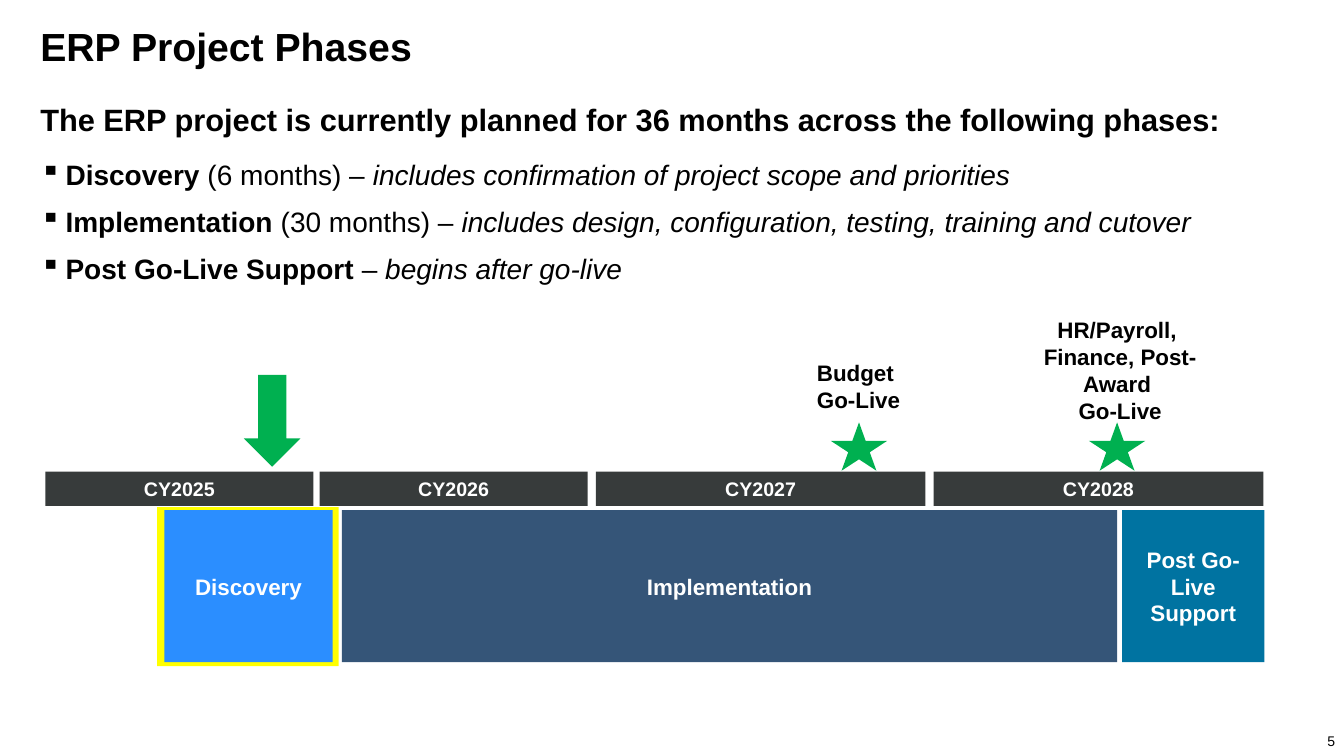
"""Build the ERP project phases slide with its timeline."""
from dataclasses import dataclass

import lxml.etree
import pptx
import pptx.dml.color
import pptx.enum.shapes
import pptx.enum.text
import pptx.oxml.ns
import pptx.util

Inches = pptx.util.Inches
Pt = pptx.util.Pt
RGBColor = pptx.dml.color.RGBColor
Shape = pptx.enum.shapes.MSO_SHAPE
Align = pptx.enum.text.PP_ALIGN
Anchor = pptx.enum.text.MSO_ANCHOR

BLACK = RGBColor(0x00, 0x00, 0x00)
WHITE = RGBColor(0xFF, 0xFF, 0xFF)
YELLOW = RGBColor(0xFF, 0xFF, 0x00)
GREEN = RGBColor(0x00, 0xB0, 0x50)
CHARCOAL = RGBColor(0x37, 0x3B, 0x3B)
BRIGHT_BLUE = RGBColor(0x2B, 0x8E, 0xFF)
NAVY = RGBColor(0x35, 0x55, 0x78)
TEAL = RGBColor(0x00, 0x73, 0xA1)

FONT = "Arial"
MARGIN = 0.4
YEAR_TOP, YEAR_HEIGHT = 4.68, 0.34
PHASE_TOP, PHASE_HEIGHT = 5.06, 1.51
STAR_WIDTH, STAR_HEIGHT = 0.56, 0.48
STAR_TOP = 4.19


@dataclass(frozen=True)
class Bar:
    label: str
    left: float
    width: float
    color: RGBColor


@dataclass(frozen=True)
class Milestone:
    label: str
    left: float
    top: float
    width: float
    star_left: float


@dataclass(frozen=True)
class Phase:
    name: str
    duration: str
    details: str


YEARS = [
    Bar("CY2025", 0.45, 2.66, CHARCOAL),
    Bar("CY2026", 3.17, 2.66, CHARCOAL),
    Bar("CY2027", 5.91, 3.27, CHARCOAL),
    Bar("CY2028", 9.26, 3.27, CHARCOAL),
]
PHASE_BARS = [
    Bar("Discovery", 1.63, 1.67, BRIGHT_BLUE),
    Bar("Implementation", 3.39, 7.69, NAVY),
    Bar("Post Go-Live Support", 11.13, 1.41, TEAL),
]
MILESTONES = [
    Milestone("Budget \nGo-Live", 7.67, 3.43, 1.69, 8.24),
    Milestone("HR/Payroll, \nFinance, Post-Award \nGo-Live", 9.94, 3.01, 2.34, 10.8),
]
PHASES = [
    Phase("Discovery", " (6 months) – ", "includes confirmation of project scope and priorities"),
    Phase("Implementation", " (30 months) – ",
          "includes design, configuration, testing, training and cutover"),
    Phase("Post Go-Live Support ", "– ", "begins after go-live"),
]


def format_run(run, size: float, color: RGBColor = BLACK, bold: bool = True,
               italic: bool = False) -> None:
    run.font.name = FONT
    run.font.size = Pt(size)
    run.font.color.rgb = color
    run.font.bold = bold
    run.font.italic = italic


def format_text(frame, size: float, color: RGBColor, align, bold: bool = True) -> None:
    for paragraph in frame.paragraphs:
        paragraph.alignment = align
        for run in paragraph.runs:
            format_run(run, size, color, bold)


def set_insets(frame, left: float, top: float, right: float, bottom: float) -> None:
    frame.margin_left, frame.margin_top = Inches(left), Inches(top)
    frame.margin_right, frame.margin_bottom = Inches(right), Inches(bottom)


def add_figure(slide, kind, left: float, top: float, width: float, height: float,
               color: RGBColor):
    figure = slide.shapes.add_shape(kind, Inches(left), Inches(top), Inches(width), Inches(height))
    figure.shadow.inherit = False
    figure.fill.solid()
    figure.fill.fore_color.rgb = color
    figure.line.fill.background()
    return figure


def add_text_frame(slide, left: float, top: float, width: float, height: float):
    frame = slide.shapes.add_textbox(
        Inches(left), Inches(top), Inches(width), Inches(height)).text_frame
    frame.word_wrap = True
    return frame


def add_bar(slide, bar: Bar, top: float, height: float, size: float) -> None:
    frame = add_figure(slide, Shape.RECTANGLE, bar.left, top, bar.width, height,
                       bar.color).text_frame
    frame.text = bar.label
    frame.vertical_anchor = Anchor.MIDDLE
    format_text(frame, size, WHITE, Align.CENTER)


def add_milestone(slide, milestone: Milestone) -> None:
    add_figure(slide, Shape.STAR_5_POINT, milestone.star_left, STAR_TOP,
               STAR_WIDTH, STAR_HEIGHT, GREEN)
    frame = add_text_frame(slide, milestone.left, milestone.top, milestone.width, 0.75)
    set_insets(frame, 0.13, 0.13, 0.13, 0.13)
    frame.text = milestone.label
    format_text(frame, 16, BLACK, Align.CENTER)


def add_phase_line(frame, phase: Phase) -> None:
    paragraph = frame.add_paragraph()
    properties = paragraph._p.get_or_add_pPr()
    properties.set("marL", str(Inches(0.25)))
    properties.set("indent", str(-Inches(0.25)))
    bullet = lxml.etree.SubElement(properties, pptx.oxml.ns.qn("a:buChar"))
    bullet.set("char", "▪")
    paragraph.line_spacing = 1.07
    paragraph.space_after = Pt(8)
    for text, bold, italic in ((phase.name, True, False), (phase.duration, False, False),
                               (phase.details, False, True)):
        run = paragraph.add_run()
        run.text = text
        format_run(run, 20, BLACK, bold, italic)


def add_title(slide) -> None:
    title = slide.shapes.title
    title.left, title.top = Inches(MARGIN), Inches(0.24)
    title.width, title.height = Inches(12.33), Inches(0.48)
    frame = title.text_frame
    frame.text = "ERP Project Phases"
    frame.vertical_anchor = Anchor.MIDDLE
    set_insets(frame, 0, 0, 0, 0)
    frame.paragraphs[0].line_spacing = 0.9
    format_text(frame, 28, BLACK, Align.LEFT)


def add_overview(slide) -> None:
    frame = add_text_frame(slide, MARGIN, 1.07, 13.12, 1.8)
    set_insets(frame, 0, 0.05, 0.1, 0.05)
    frame.text = "The ERP project is currently planned for 36 months across the following phases:"
    format_text(frame, 22, BLACK, Align.LEFT)
    frame.paragraphs[0].line_spacing = Pt(18)
    frame.paragraphs[0].space_after = Pt(12)
    for phase in PHASES:
        add_phase_line(frame, phase)


def add_timeline(slide) -> None:
    add_figure(slide, Shape.RECTANGLE, 1.56, 5.03, 1.8, 1.58, YELLOW)
    for bar in PHASE_BARS:
        add_bar(slide, bar, PHASE_TOP, PHASE_HEIGHT, 16)
    for bar in YEARS:
        add_bar(slide, bar, YEAR_TOP, YEAR_HEIGHT, 14)
    for milestone in MILESTONES:
        add_milestone(slide, milestone)
    add_figure(slide, Shape.DOWN_ARROW, 2.42, 3.72, 0.56, 0.91, GREEN)


def main() -> None:
    deck = pptx.Presentation()
    deck.slide_width, deck.slide_height = Inches(13.33), Inches(7.5)
    slide = deck.slides.add_slide(deck.slide_layouts[5])
    add_title(slide)
    add_overview(slide)
    add_timeline(slide)
    page_number = add_text_frame(slide, 12.78, 7.22, 0.56, 0.27)
    page_number.text = "5"
    format_text(page_number, 10, BLACK, Align.RIGHT, bold=False)
    deck.save("out.pptx")


if __name__ == "__main__":
    main()
